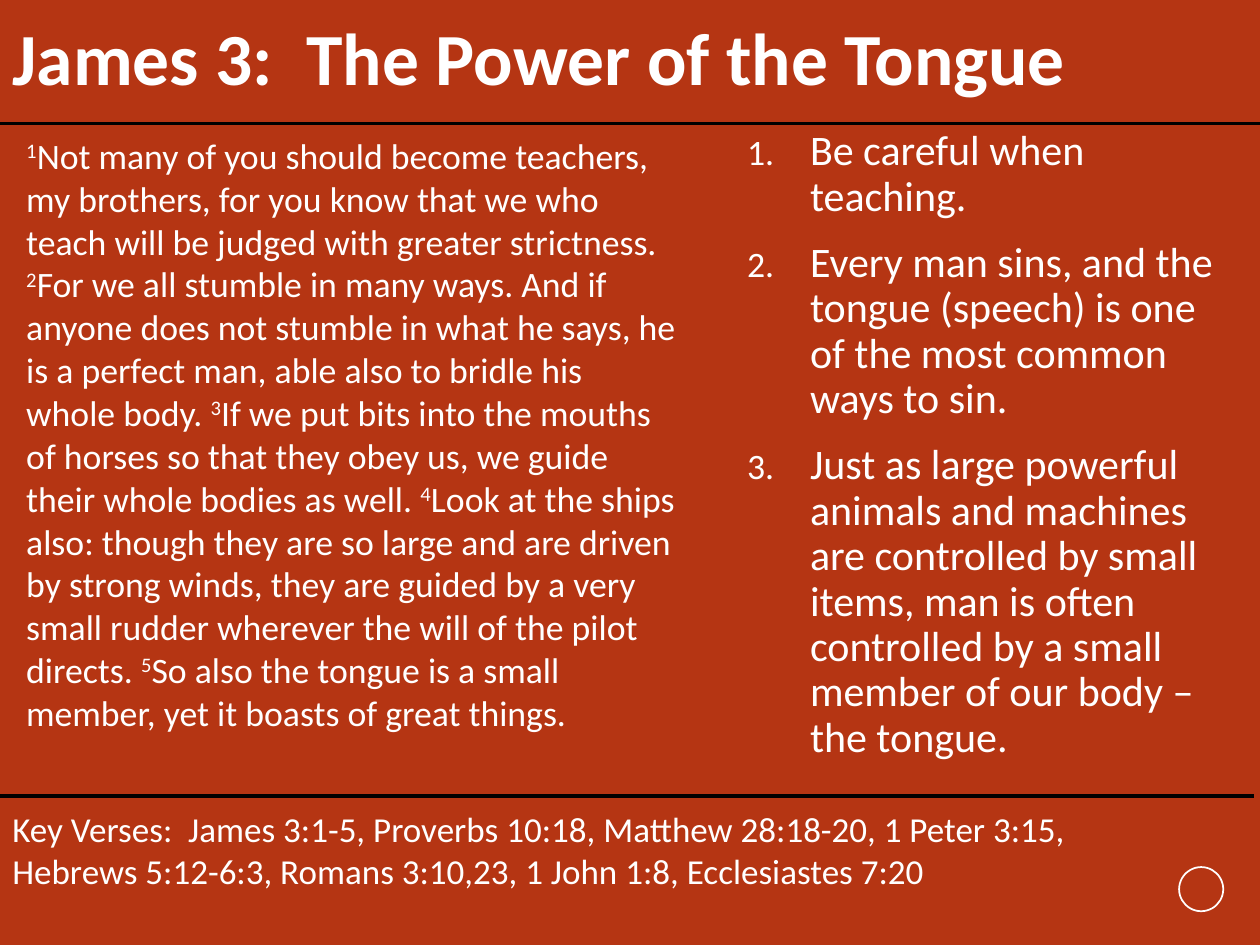
from dataclasses import dataclass

from lxml import etree
from pptx import Presentation
from pptx.dml.color import RGBColor
from pptx.enum.shapes import MSO_CONNECTOR, MSO_SHAPE
from pptx.enum.text import MSO_ANCHOR, PP_ALIGN
from pptx.oxml.ns import qn
from pptx.util import Cm, Pt

LEFT = PP_ALIGN.LEFT
MIDDLE = MSO_ANCHOR.MIDDLE
STRAIGHT = MSO_CONNECTOR.STRAIGHT
OVAL = MSO_SHAPE.OVAL


@dataclass(frozen=True)
class Theme:
    background: RGBColor = RGBColor(0xB5, 0x35, 0x13)
    text: RGBColor = RGBColor(0xFF, 0xFF, 0xFF)
    rule: RGBColor = RGBColor(0x00, 0x00, 0x00)
    font: str = "Calibri"
    title_size: float = 42
    passage_size: float = 20.4
    point_size: float = 24
    reference_size: float = 20


theme = Theme()

verses = [
    "Not many of you should become teachers, my brothers, for you know that we who teach "
    "will be judged with greater strictness. ",
    "For we all stumble in many ways. And if anyone does not stumble in what he says, he is "
    "a perfect man, able also to bridle his whole body. ",
    "If we put bits into the mouths of horses so that they obey us, we guide their whole "
    "bodies as well. ",
    "Look at the ships also: though they are so large and are driven by strong winds, they "
    "are guided by a very small rudder wherever the will of the pilot directs. ",
    "So also the tongue is a small member, yet it boasts of great things.",
]
points = [
    "Be careful when teaching.",
    "Every man sins, and the tongue (speech) is one of the most common ways to sin.",
    "Just as large powerful animals and machines are controlled by small items, man is often "
    "controlled by a small member of our body – the tongue.",
]
references = (
    "Key Verses:  James 3:1-5, Proverbs 10:18, Matthew 28:18-20, 1 Peter 3:15, "
    "Hebrews 5:12-6:3, Romans 3:10,23, 1 John 1:8, Ecclesiastes 7:20"
)


def style(para, size, bold=False):
    para.alignment = LEFT
    para.font.name = theme.font
    para.font.size = Pt(size)
    para.font.bold = bold
    para.font.color.rgb = theme.text


def add_text_frame(page, left, top, width, height):
    frame = page.shapes.add_textbox(Cm(left), Cm(top), Cm(width), Cm(height)).text_frame
    frame.word_wrap = True
    return frame


deck = Presentation()
deck.slide_width, deck.slide_height = Cm(25.4), Cm(19.05)
page = deck.slides.add_slide(deck.slide_layouts[5])
page.background.fill.solid()
page.background.fill.fore_color.rgb = theme.background

ring = page.shapes.add_shape(OVAL, Cm(23.77), Cm(17.48), Cm(0.89), Cm(0.89))
ring.shadow.inherit = False
ring.fill.background()
ring.line.color.rgb = theme.text
ring.line.width = Pt(1)

title = page.shapes.title
title.left, title.top, title.width, title.height = Cm(0), Cm(0), Cm(25.4), Cm(2.49)
title.text_frame.text = "James 3:  The Power of the Tongue"
title.text_frame.vertical_anchor = MIDDLE
heading = title.text_frame.paragraphs[0]
heading.line_spacing = 0.9
style(heading, theme.title_size, bold=True)

passage = add_text_frame(page, 0.28, 2.57, 13.59, 13.18).paragraphs[0]
passage.space_after = Pt(2)
style(passage, theme.passage_size)
for number, verse in enumerate(verses, start=1):
    marker = passage.add_run()
    marker.text = str(number)
    marker.font._element.set("baseline", "30000")
    passage.add_run().text = verse

outline = add_text_frame(page, 14.81, 2.49, 10.31, 13.46)
for index, point in enumerate(points):
    para = outline.add_paragraph() if index else outline.paragraphs[0]
    para.text = point
    para.line_spacing = 0.9
    if index:
        para.space_before = Pt(12)
    properties = para._p.get_or_add_pPr()
    properties.set("marL", str(Cm(1.27)))
    properties.set("indent", str(-Cm(1.27)))
    bullet_color = etree.SubElement(properties, qn("a:buClr"))
    etree.SubElement(bullet_color, qn("a:srgbClr"), val=str(theme.text))
    etree.SubElement(properties, qn("a:buSzPct"), val="85000")
    etree.SubElement(properties, qn("a:buFont"), typeface=theme.font)
    etree.SubElement(properties, qn("a:buAutoNum"), type="arabicPeriod")
    style(para, theme.point_size)

for left, top in [(0, 2.49), (-0.13, 16.05)]:
    rule = page.shapes.add_connector(STRAIGHT, Cm(left), Cm(top), Cm(left + 25.4), Cm(top))
    rule.line.color.rgb = theme.rule
    rule.line.width = Pt(2.25)
    etree.SubElement(rule._element.spPr, qn("a:effectLst"))

key_verses = add_text_frame(page, 0, 16.15, 23.67, 1.96).paragraphs[0]
key_verses.text = references
style(key_verses, theme.reference_size)

deck.save("out.pptx")
